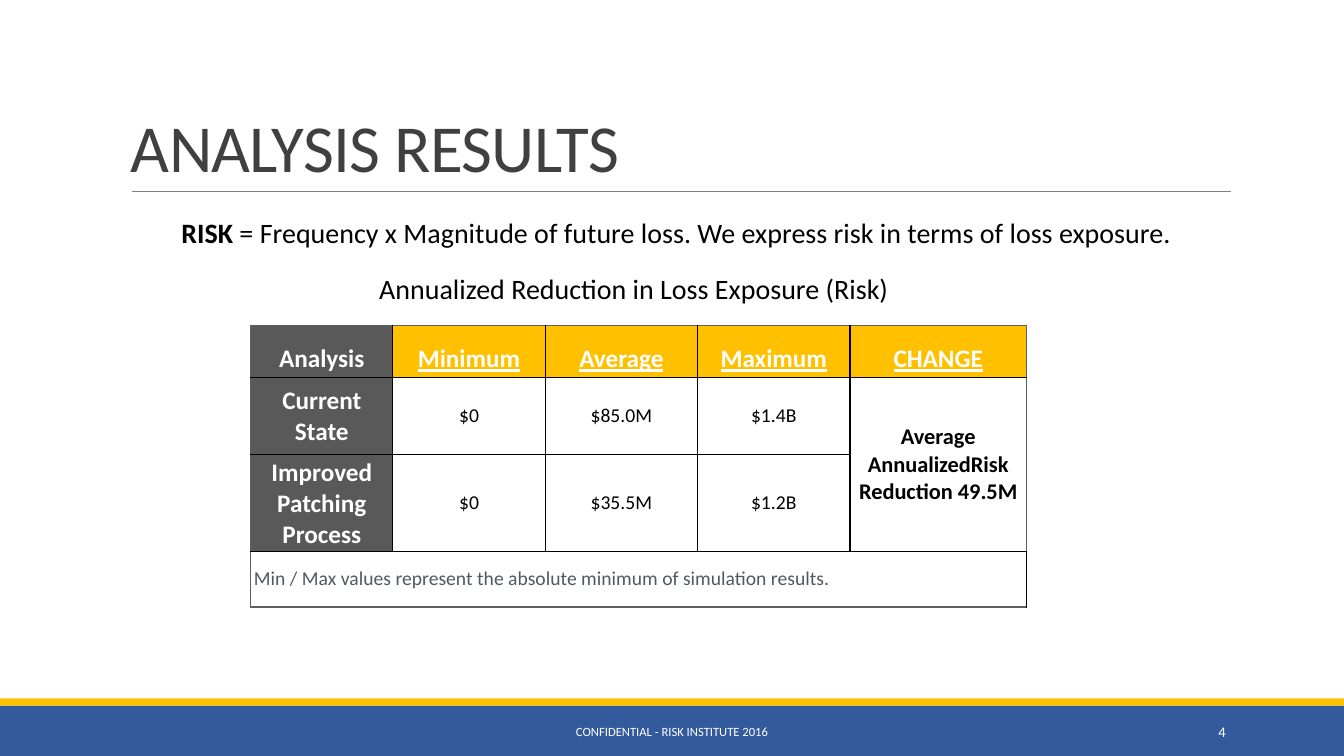
from pptx import Presentation
from pptx.dml.color import RGBColor
from pptx.enum.shapes import MSO_CONNECTOR, MSO_SHAPE
from pptx.enum.text import MSO_ANCHOR as Anchor, PP_ALIGN as Align
from pptx.oxml.ns import qn
from pptx.util import Cm, Pt
from lxml.etree import SubElement

FONT = "Calibri"
WHITE = RGBColor(0xFF, 0xFF, 0xFF)
BLACK = RGBColor(0, 0, 0)
BLUE = RGBColor(0x33, 0x5A, 0x9D)
GOLD = RGBColor(0xFF, 0xC0, 0x00)
TITLE_GREY = RGBColor(0x40, 0x40, 0x40)
RULE_GREY = RGBColor(0x80, 0x80, 0x80)
LABEL_GREY = RGBColor(0x59, 0x59, 0x59)
EDGE_GREY = RGBColor(0x60, 0x60, 0x60)
NOTE_GREY = RGBColor(0x53, 0x58, 0x5F)

SLIDE_W, SLIDE_H = Cm(33.87), Cm(19.05)
COLUMN_WIDTHS = [Cm(w) for w in (3.58, 3.84, 3.84, 3.84, 4.45)]
ROW_HEIGHTS = [Cm(h) for h in (1.32, 1.93, 2.11, 1.4)]
RESULTS = [
    ["Analysis", "Minimum", "Average", "Maximum", "CHANGE"],
    ["Current State", "$0", "$85.0M", "$1.4B",
     "Average AnnualizedRisk Reduction 49.5M"],
    ["Improved Patching Process", "$0", "$35.5M", "$1.2B", ""],
    ["Min / Max values represent the absolute minimum of simulation results.",
     "", "", "", ""],
]


def style_font(font, size, color, bold=False, underline=False):
    font.name = FONT
    font.size = Pt(size)
    font.color.rgb = color
    font.bold = bold
    font.underline = underline


def add_text(slide, box, text, size, color, align=Align.LEFT, anchor=Anchor.MIDDLE):
    """Add a one-line text box and return its frame."""
    frame = slide.shapes.add_textbox(*box).text_frame
    frame.word_wrap = True
    frame.vertical_anchor = anchor
    frame.text = text
    line = frame.paragraphs[0]
    line.alignment = align
    style_font(line.runs[0].font, size, color)
    return frame


def add_title(slide, left, top, width, height):
    frame = add_text(slide, (left, top, width, height), "ANALYSIS RESULTS",
                     48, TITLE_GREY, anchor=Anchor.BOTTOM)
    line = frame.paragraphs[0]
    line.line_spacing = 0.85
    line.runs[0].font._element.set("spc", "-50")

    bottom = top + height
    rule = slide.shapes.add_connector(
        MSO_CONNECTOR.STRAIGHT, left + Cm(0.28), bottom, left + width + Cm(0.02), bottom)
    rule.line.color.rgb = RULE_GREY
    rule.line.width = Pt(0.5)
    SubElement(rule._element.spPr, qn("a:effectLst"))


def add_definition(slide, left, top, width, height):
    frame = add_text(slide, (left, top, width, height), "RISK", 20, BLACK)
    frame.margin_left = frame.margin_right = 0
    line = frame.paragraphs[0]
    line.line_spacing = 0.9
    line.runs[0].font.bold = True
    meaning = line.add_run()
    meaning.text = " = Frequency x Magnitude of future loss. We express risk in terms of loss exposure."
    style_font(meaning.font, 20, BLACK)


def add_borders(cell, colors):
    """Draw 1 pt borders; colors maps the sides L, R, T and B in that order."""
    properties = cell._tc.get_or_add_tcPr()
    for side, color in colors.items():
        border = SubElement(properties, qn(f"a:ln{side}"), w=str(Pt(1)))
        fill = SubElement(border, qn("a:solidFill"))
        SubElement(fill, qn("a:srgbClr"), val=str(color))


def cell_style(row, column):
    """Return fill, text colour, size, bold and underline for a cell."""
    if row == len(RESULTS) - 1:
        return WHITE, NOTE_GREY, 14, False, False
    if column == 0:
        return LABEL_GREY, WHITE, 18, True, False
    if row == 0:
        return GOLD, WHITE, 18, True, True
    if column == len(COLUMN_WIDTHS) - 1:
        return WHITE, BLACK, 16, True, False
    return WHITE, BLACK, 14, False, False


def add_results_table(slide, left, top):
    last_row, last_column = len(ROW_HEIGHTS) - 1, len(COLUMN_WIDTHS) - 1
    table = slide.shapes.add_table(len(ROW_HEIGHTS), len(COLUMN_WIDTHS), left, top,
                                   sum(COLUMN_WIDTHS), sum(ROW_HEIGHTS)).table
    for column, width in zip(table.columns, COLUMN_WIDTHS):
        column.width = width
    for row, height in zip(table.rows, ROW_HEIGHTS):
        row.height = height
    table.cell(1, last_column).merge(table.cell(2, last_column))
    table.cell(last_row, 0).merge(table.cell(last_row, last_column))

    for r, values in enumerate(RESULTS):
        for c, value in enumerate(values):
            cell = table.cell(r, c)
            fill, color, size, bold, underline = cell_style(r, c)
            on_edge = {"L": c == 0, "R": c == last_column,
                       "T": r == 0, "B": r == last_row}
            add_borders(cell, {side: EDGE_GREY if edge else BLACK
                               for side, edge in on_edge.items()})
            cell.fill.solid()
            cell.fill.fore_color.rgb = fill
            cell.margin_left = cell.margin_right = Cm(0.08)
            cell.margin_top = cell.margin_bottom = Cm(0.08)
            cell.vertical_anchor = Anchor.BOTTOM if r == 0 else Anchor.MIDDLE
            if value:
                cell.text_frame.text = value
                line = cell.text_frame.paragraphs[0]
                line.alignment = Align.LEFT if r == last_row else Align.CENTER
                style_font(line.runs[0].font, size, color, bold, underline)


def add_footer(slide, left, top, width, height):
    stripe = Cm(0.18)
    bands = [(top + stripe, height - stripe, BLUE), (top, stripe, GOLD)]
    for band_top, band_height, color in bands:
        band = slide.shapes.add_shape(MSO_SHAPE.RECTANGLE, left, band_top, width, band_height)
        band.shadow.inherit = False
        band.fill.solid()
        band.fill.fore_color.rgb = color
        band.line.fill.background()

    text_top, text_height = top + Cm(0.33), Cm(1.02)
    add_text(slide, (left + Cm(10.24), text_top, Cm(13.39), text_height),
             "CONFIDENTIAL - RISK INSTITUTE 2016", 9, WHITE, Align.CENTER)
    add_text(slide, (left + Cm(27.51), text_top, Cm(3.63), text_height),
             "4", 10.5, WHITE, Align.RIGHT)


def main():
    deck = Presentation()
    deck.slide_width, deck.slide_height = SLIDE_W, SLIDE_H
    slide = deck.slides.add_slide(deck.slide_layouts[6])
    footer_top = Cm(17.6)
    add_footer(slide, 0, footer_top, SLIDE_W, SLIDE_H - footer_top)
    add_title(slide, Cm(3.05), Cm(0.79), Cm(27.94), Cm(4.03))
    add_definition(slide, Cm(4.57), Cm(5.18), Cm(25.12), Cm(1.47))
    add_results_table(slide, Cm(6.32), Cm(8.2))
    add_text(slide, (Cm(7.82), Cm(6.71), Cm(16.31), Cm(1.12)),
             "Annualized Reduction in Loss Exposure (Risk)", 20, BLACK,
             Align.CENTER, Anchor.TOP)
    deck.save("out.pptx")


if __name__ == "__main__":
    main()
